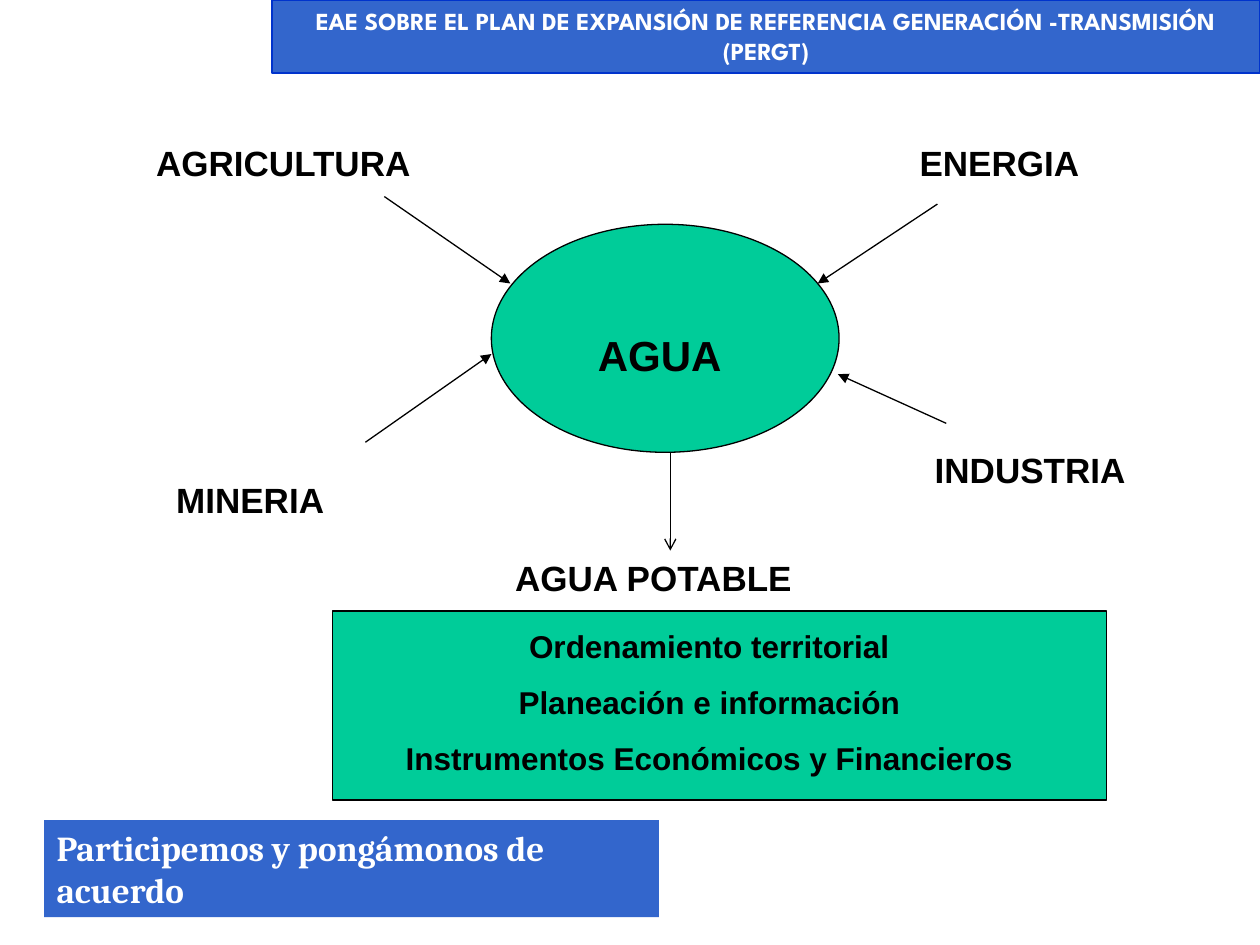
"""Build the slide on water and the sectors that depend on it."""
from dataclasses import dataclass
from typing import Optional

import pptx
import pptx.dml.color
import pptx.enum.shapes
import pptx.enum.text
import pptx.oxml.ns
import pptx.util
from lxml import etree

Inches = pptx.util.Inches
Pt = pptx.util.Pt
SHAPES = pptx.enum.shapes.MSO_SHAPE
ALIGN = pptx.enum.text.PP_ALIGN
ANCHOR = pptx.enum.text.MSO_ANCHOR

COLORS = {
    "blue": "3366CC",
    "navy": "0033CC",
    "green": "00CC99",
    "black": "000000",
    "white": "FFFFFF",
}


@dataclass
class Panel:
    left: float
    top: float
    width: float
    height: float
    fill: str
    line: Optional[str] = None
    kind: SHAPES = SHAPES.RECTANGLE


@dataclass
class Label:
    lines: tuple[str, ...]
    left: float
    top: float
    width: float
    height: float = 0.43
    size: int = 20
    align: ALIGN = ALIGN.LEFT


@dataclass
class Arrow:
    x1: float
    y1: float
    x2: float
    y2: float
    head: str = "triangle"


HEADING = Panel(2.16, 0, 7.84, 0.58, "blue", "navy")
CALL = Panel(0.35, 6.51, 4.88, 0.77, "blue")
WATER = Panel(3.9, 1.78, 2.76, 1.81, "green", "black", SHAPES.OVAL)
TOOLS = Panel(2.64, 4.85, 6.14, 1.5, "green", "black")

LABELS = [
    Label(("AGUA",), 4.29, 2.57, 1.89, 0.5, 24, ALIGN.CENTER),
    Label(("AGRICULTURA",), 1.14, 1.07, 2.68),
    Label(("ENERGIA",), 7.2, 1.07, 2.36),
    Label(("MINERIA",), 1.3, 3.75, 3.07),
    Label(("INDUSTRIA",), 7.32, 3.51, 2.68),
    Label(("AGUA POTABLE",), 3.99, 4.37, 3.07),
    Label(
        (
            "Ordenamiento territorial",
            "Planeación e información",
            "Instrumentos Económicos y Financieros",
        ),
        2.56, 4.93, 6.14, 1.3, 18, ALIGN.CENTER,
    ),
]

ARROWS = [
    Arrow(3.05, 1.56, 4.05, 2.25),
    Arrow(7.44, 1.62, 6.49, 2.25),
    Arrow(2.9, 3.51, 3.9, 2.81),
    Arrow(7.51, 3.36, 6.65, 2.97),
    Arrow(5.32, 3.59, 5.32, 4.37, "arrow"),
]


def rgb(name: str) -> pptx.dml.color.RGBColor:
    """Return the named colour."""
    return pptx.dml.color.RGBColor.from_string(COLORS[name])


def write(box, lines: tuple[str, ...], size: int, font: str, color: str,
          align: ALIGN, anchor: ANCHOR = ANCHOR.TOP) -> None:
    """Fill a box with bold paragraphs, spaced by half a line."""
    frame = box.text_frame
    frame.word_wrap = True
    frame.vertical_anchor = anchor
    for index, line in enumerate(lines):
        para = frame.add_paragraph() if index else frame.paragraphs[0]
        para.alignment = align
        if index:
            para.space_before = Pt(size * 0.57)
        span = para.add_run()
        span.text = line
        span.font.name = font
        span.font.size = Pt(size)
        span.font.bold = True
        span.font.color.rgb = rgb(color)


def draw_panel(page, panel: Panel):
    """Draw a filled shape and return it."""
    box = page.shapes.add_shape(
        panel.kind, Inches(panel.left), Inches(panel.top),
        Inches(panel.width), Inches(panel.height))
    box.shadow.inherit = False
    box.fill.solid()
    box.fill.fore_color.rgb = rgb(panel.fill)
    if panel.line:
        box.line.color.rgb = rgb(panel.line)
        box.line.width = Pt(0.75)
    else:
        box.line.fill.background()
    return box


def draw_label(page, label: Label) -> None:
    """Draw a text box."""
    box = page.shapes.add_textbox(
        Inches(label.left), Inches(label.top),
        Inches(label.width), Inches(label.height))
    write(box, label.lines, label.size, "Arial", "black", label.align)


def draw_arrow(page, arrow: Arrow) -> None:
    """Draw a thin black line with an arrowhead at its end."""
    link = page.shapes.add_connector(
        pptx.enum.shapes.MSO_CONNECTOR.STRAIGHT,
        Inches(arrow.x1), Inches(arrow.y1), Inches(arrow.x2), Inches(arrow.y2))
    link.line.color.rgb = rgb("black")
    link.line.width = Pt(0.75)
    qn = pptx.oxml.ns.qn
    properties = link.element.spPr
    etree.SubElement(properties.find(qn("a:ln")), qn("a:tailEnd"), type=arrow.head)
    etree.SubElement(properties, qn("a:effectLst"))


def main() -> None:
    """Build and save the deck."""
    deck = pptx.Presentation()
    deck.slide_width = Inches(10)
    deck.slide_height = Inches(7.5)
    page = deck.slides.add_slide(deck.slide_layouts[6])

    heading = draw_panel(page, HEADING)
    write(heading,
          ("EAE SOBRE EL PLAN DE EXPANSIÓN DE REFERENCIA GENERACIÓN -TRANSMISIÓN (PERGT)",),
          14, "League Spartan", "white", ALIGN.CENTER)
    call = draw_panel(page, CALL)
    write(call, ("Participemos y pongámonos de acuerdo",),
          20, "Cambria", "white", ALIGN.LEFT, ANCHOR.MIDDLE)
    for panel in (WATER, TOOLS):
        draw_panel(page, panel)
    for label in LABELS:
        draw_label(page, label)
    for arrow in ARROWS:
        draw_arrow(page, arrow)

    deck.save("out.pptx")


if __name__ == "__main__":
    main()
